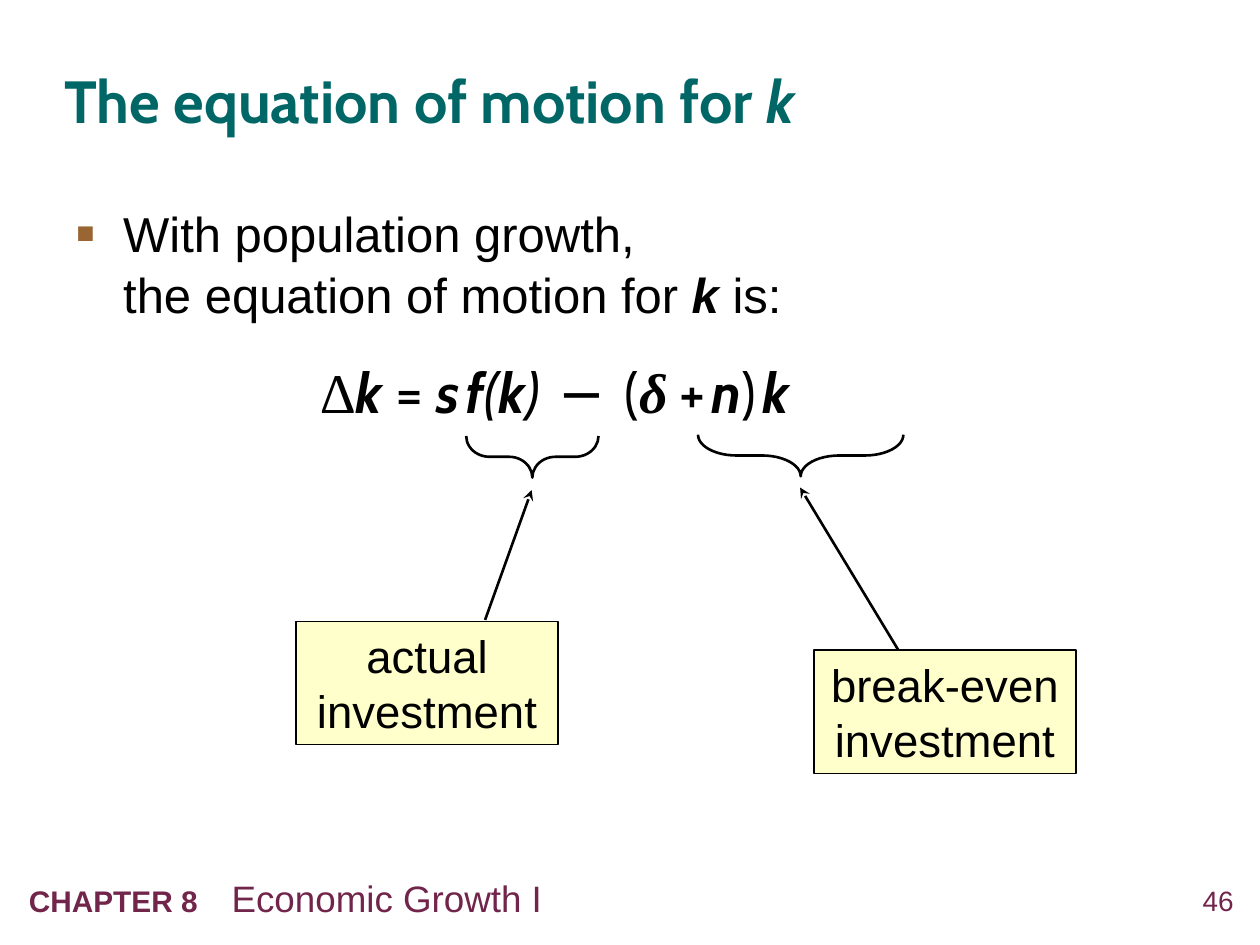
from dataclasses import dataclass

from lxml.etree import SubElement
from pptx import Presentation
from pptx.dml.color import RGBColor
from pptx.enum.shapes import MSO_CONNECTOR, MSO_SHAPE
from pptx.enum.text import MSO_ANCHOR, PP_ALIGN
from pptx.oxml.ns import qn
from pptx.util import Emu, Pt

EMU_PER_PX = 9144  # 100 px to the inch
BLACK, TEAL, PLUM, BROWN, CREAM = "000000", "006666", "71254B", "996633", "FFFFCC"
ARIAL, CABIN, TIMES = "Arial", "Cabin", "Times New Roman"


@dataclass(frozen=True)
class Span:
    text: str
    size: int
    font: str = ARIAL
    color: str = BLACK
    bold: bool = False
    italic: bool = False
    spacing: int = 0  # hundredths of a point


@dataclass(frozen=True)
class Callout:
    label: str
    label_at: tuple[int, int]
    brace_at: tuple[int, int, int, int]
    brace_curve: float
    arrow_start: tuple[int, int]
    arrow_end: tuple[int, int]


def px(length: int) -> Emu:
    return Emu(length * EMU_PER_PX)


def rgb(color: str) -> RGBColor:
    return RGBColor.from_string(color)


def add_spans(para, spans: list[Span]) -> None:
    for span in spans:
        run = para.add_run()
        run.text = span.text
        font = run.font
        font.name, font.size = span.font, Pt(span.size)
        font.bold, font.italic = span.bold, span.italic
        font.color.rgb = rgb(span.color)
        if span.spacing:
            run._r.get_or_add_rPr().set("spc", str(span.spacing))


def add_text(page, at: tuple[int, int, int, int], spans: list[Span],
             align=PP_ALIGN.LEFT, anchor=MSO_ANCHOR.TOP, inset: bool = True):
    box = page.shapes.add_textbox(*map(px, at))
    frame = box.text_frame
    frame.word_wrap = True
    frame.vertical_anchor = anchor
    if not inset:
        frame.margin_left = frame.margin_right = 0
        frame.margin_top = frame.margin_bottom = 0
    para = frame.paragraphs[0]
    para.alignment = align
    add_spans(para, spans)
    return para


def add_bullet(para, mark: str, color: str, indent: int) -> None:
    properties = para._p.get_or_add_pPr()
    properties.set("marL", str(px(indent)))
    properties.set("indent", str(-px(indent)))
    fill = SubElement(properties, qn("a:buClr"))
    SubElement(fill, qn("a:srgbClr"), val=color)
    SubElement(properties, qn("a:buSzPct"), val="120000")
    SubElement(properties, qn("a:buFont"), typeface=ARIAL)
    SubElement(properties, qn("a:buChar"), char=mark)


def add_tab_stop(para, position: int) -> None:
    stops = SubElement(para._p.get_or_add_pPr(), qn("a:tabLst"))
    SubElement(stops, qn("a:tab"), pos=str(px(position)), algn="l")


def add_arrow(page, start: tuple[int, int], end: tuple[int, int]) -> None:
    arrow = page.shapes.add_connector(MSO_CONNECTOR.STRAIGHT, *map(px, start + end))
    arrow.line.color.rgb = rgb(BLACK)
    arrow.line.width = Pt(1.5)
    SubElement(arrow.line._get_or_add_ln(), qn("a:tailEnd"), type="stealth")
    SubElement(arrow._element.spPr, qn("a:effectLst"))


def add_callout(page, callout: Callout) -> None:
    # Brace, turned to point down
    brace = page.shapes.add_shape(MSO_SHAPE.LEFT_BRACE, *map(px, callout.brace_at))
    brace.rotation = 270
    brace.adjustments[0] = callout.brace_curve
    brace.shadow.inherit = False
    brace.fill.background()
    brace.line.color.rgb = rgb(BLACK)
    brace.line.width = Pt(1.5)

    # Label
    box = page.shapes.add_shape(MSO_SHAPE.RECTANGLE, *map(px, callout.label_at + (208, 98)))
    box.shadow.inherit = False
    box.fill.solid()
    box.fill.fore_color.rgb = rgb(CREAM)
    box.line.color.rgb = rgb(BLACK)
    box.line.width = Pt(0.75)
    box.text_frame.word_wrap = True
    para = box.text_frame.paragraphs[0]
    para.alignment = PP_ALIGN.CENTER
    add_spans(para, [Span(callout.label, 26)])

    add_arrow(page, callout.arrow_start, callout.arrow_end)


def symbol(text: str, spacing: int = 0) -> Span:
    return Span(text, 32, CABIN, bold=True, italic=True, spacing=spacing)


def upright(text: str, spacing: int = 0) -> Span:
    return Span(text, 32, CABIN, spacing=spacing)


def slanted(text: str) -> Span:
    return Span(text, 32, CABIN, italic=True)


def gap(size: int = 15) -> Span:
    return Span(" ", size, CABIN, bold=True, italic=True)


EQUATION = [
    Span("Δ", 32, TIMES), symbol("k "), upright("= "), symbol("s"), gap(),
    symbol("f"), slanted("("), symbol("k"), slanted(")"),
    upright(" ", 350), upright("−"), upright(" ", 350), upright("("),
    Span("δ", 32, TIMES, bold=True, italic=True), gap(30), upright("+"), gap(),
    symbol("n"), upright(")"), gap(), symbol("k"),
]

CALLOUTS = [
    Callout("break-even investment", (646, 516), (619, 280, 33, 163), 0.93,
            (713, 516), (635, 387)),
    Callout("actual investment", (235, 493), (406, 310, 33, 105), 0.56,
            (385, 492), (422, 389)),
]


def main() -> None:
    deck = Presentation()
    deck.slide_width, deck.slide_height = px(1000), px(750)
    page = deck.slides.add_slide(deck.slide_layouts[6])

    # Footer
    add_text(page, (924, 701, 55, 32), [Span("46", 16, color=PLUM)],
             align=PP_ALIGN.RIGHT, inset=False)
    footer = add_text(page, (13, 690, 818, 45), [
        Span("CHAPTER 8\t", 17, color=PLUM, bold=True),
        Span("Economic Growth I", 21, color=PLUM)])
    add_tab_stop(footer, 161)

    # Title
    title = add_text(page, (51, 26, 902, 103), [
        Span("The equation of motion for ", 34, CABIN, TEAL, bold=True),
        Span("k", 34, CABIN, TEAL, bold=True, italic=True)],
        anchor=MSO_ANCHOR.MIDDLE, inset=False)
    title.line_spacing = 1.05

    # Statement
    statement = add_text(page, (50, 154, 900, 122), [Span("With population growth, ", 28)])
    statement.line_spacing = 1.05
    add_bullet(statement, "▪", BROWN, 38)
    statement.add_line_break()
    add_spans(statement, [Span("the equation of motion for ", 28),
                          Span("k", 28, bold=True, italic=True), Span(" is:", 28)])

    # Equation and its callouts
    for callout in CALLOUTS:
        add_callout(page, callout)
    add_text(page, (244, 279, 502, 64), EQUATION)

    deck.save("out.pptx")


if __name__ == "__main__":
    main()
